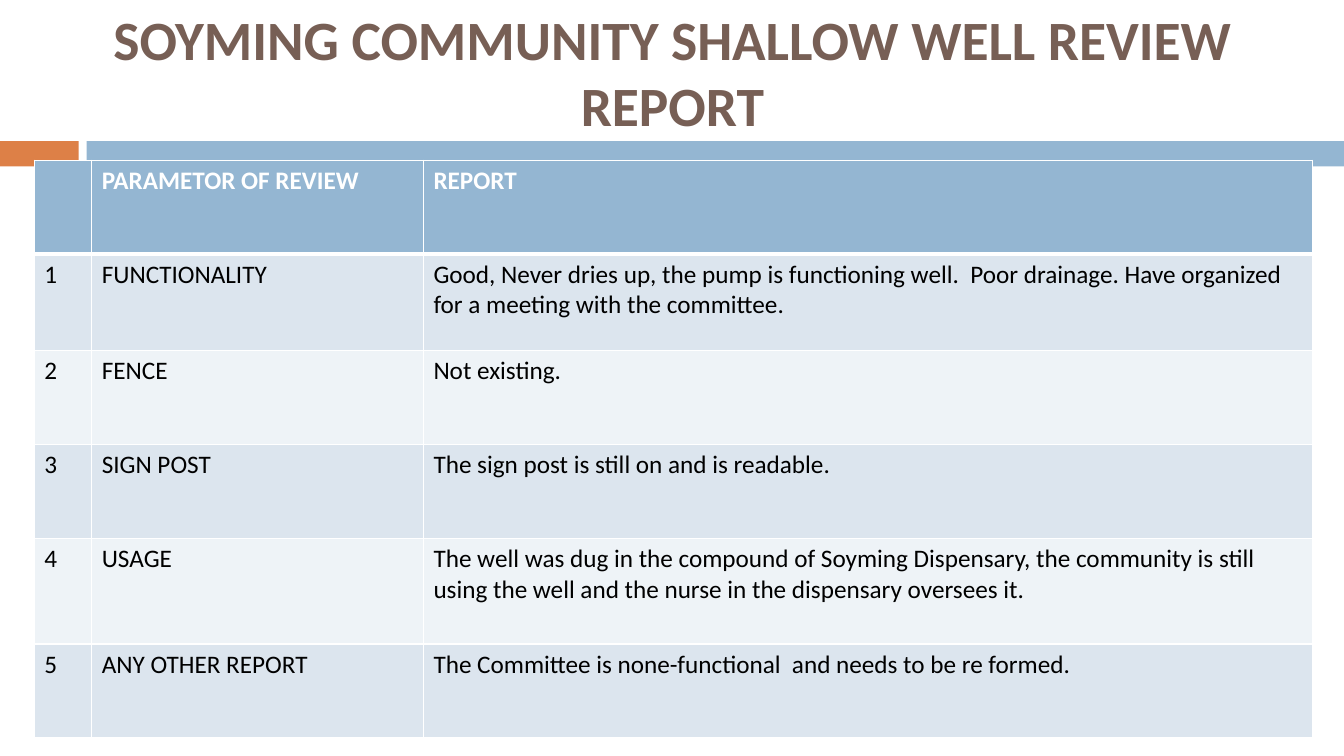
from lxml import etree
from pptx import Presentation
from pptx.dml.color import RGBColor
from pptx.enum.shapes import MSO_SHAPE
from pptx.enum.text import MSO_ANCHOR, MSO_AUTO_SIZE, PP_ALIGN
from pptx.oxml.ns import qn
from pptx.util import Inches, Pt

RECTANGLE = MSO_SHAPE.RECTANGLE
MIDDLE = MSO_ANCHOR.MIDDLE
NO_AUTOFIT = MSO_AUTO_SIZE.NONE
CENTER = PP_ALIGN.CENTER

TITLE_ONLY = 5
BLUE, ORANGE, BROWN = "94B6D2", "DD8047", "775F55"
WHITE, BLACK = "FFFFFF", "000000"
BAND_FILLS = ("DCE5EE", "EEF3F7")

COLUMN_WIDTHS = (0.57, 3.29, 8.82)
ROW_HEIGHTS = (0.93, 0.96, 0.93, 0.93, 1.05, 0.93)
HEADINGS = ("", "PARAMETOR OF REVIEW", "REPORT")
FINDINGS = (
    ("FUNCTIONALITY", "Good, Never dries up, the pump is functioning well.  Poor drainage. "
                      "Have organized for a meeting with the committee."),
    ("FENCE", "Not existing."),
    ("SIGN POST", "The sign post is still on and is readable."),
    ("USAGE", "The well was dug in the compound of Soyming Dispensary, the community is still "
              "using the well and the nurse in the dispensary oversees it."),
    ("ANY OTHER REPORT", "The Committee is none-functional  and needs to be re formed."),
)


def color(value):
    return RGBColor.from_string(value)


class SlideBuilder:
    """Holds the text style and the slide being built."""

    font_name = "Calibri"

    def __init__(self, slide):
        self.slide = slide

    def format_font(self, paragraph, size, text_color, bold):
        font = paragraph.font
        font.name = self.font_name
        font.size = Pt(size)
        font.bold = bold
        font.color.rgb = color(text_color)

    def bar(self, left, top, width, height, fill):
        shape = self.slide.shapes.add_shape(
            RECTANGLE, Inches(left), Inches(top), Inches(width), Inches(height))
        shape.shadow.inherit = False
        shape.fill.solid()
        shape.fill.fore_color.rgb = color(fill)
        shape.line.fill.background()

    def title(self, text, left, top, width, height):
        title = self.slide.shapes.title
        title.left, title.top = Inches(left), Inches(top)
        title.width, title.height = Inches(width), Inches(height)
        frame = title.text_frame
        frame.text = text
        frame.word_wrap = True
        frame.auto_size = NO_AUTOFIT
        frame.vertical_anchor = MIDDLE
        paragraph = frame.paragraphs[0]
        paragraph.alignment = CENTER
        self.format_font(paragraph, 39.6, BROWN, True)

    def cell_borders(self, cell, bottom_width):
        properties = cell._tc.get_or_add_tcPr()
        widths = {"a:lnL": 1, "a:lnR": 1, "a:lnT": 1, "a:lnB": bottom_width}
        for position, (side, width) in enumerate(widths.items()):
            line = etree.Element(qn(side), w=str(Pt(width)))
            fill = etree.SubElement(line, qn("a:solidFill"))
            etree.SubElement(fill, qn("a:srgbClr"), val=WHITE)
            properties.insert(position, line)

    def table(self, rows, left, top):
        table = self.slide.shapes.add_table(
            len(rows), len(COLUMN_WIDTHS), Inches(left), Inches(top),
            Inches(sum(COLUMN_WIDTHS)), Inches(sum(ROW_HEIGHTS))).table
        for column, width in zip(table.columns, COLUMN_WIDTHS):
            column.width = Inches(width)
        for index, (row, height, texts) in enumerate(zip(table.rows, ROW_HEIGHTS, rows)):
            row.height = Inches(height)
            header = index == 0
            for cell, text in zip(row.cells, texts):
                cell.text = text
                cell.fill.solid()
                cell.fill.fore_color.rgb = color(BLUE if header else BAND_FILLS[(index - 1) % 2])
                self.format_font(cell.text_frame.paragraphs[0], 18,
                                 WHITE if header else BLACK, header)
                # The rule under the header covers the top edge of the first body row.
                self.cell_borders(cell, 3 if header else 1)


def main():
    presentation = Presentation()
    presentation.slide_width, presentation.slide_height = Inches(13.33), Inches(7.5)
    builder = SlideBuilder(presentation.slides.add_slide(presentation.slide_layouts[TITLE_ONLY]))
    builder.bar(0, 1.4, 0.78, 0.25, ORANGE)
    builder.bar(0.86, 1.4, 12.47, 0.25, BLUE)
    builder.title("SOYMING COMMUNITY SHALLOW WELL REVIEW REPORT", 0.92, 0.12, 11.5, 1.17)
    numbered = [(str(number), *finding) for number, finding in enumerate(FINDINGS, 1)]
    builder.table([HEADINGS, *numbered], 0.34, 1.59)
    presentation.save("out.pptx")


if __name__ == "__main__":
    main()
